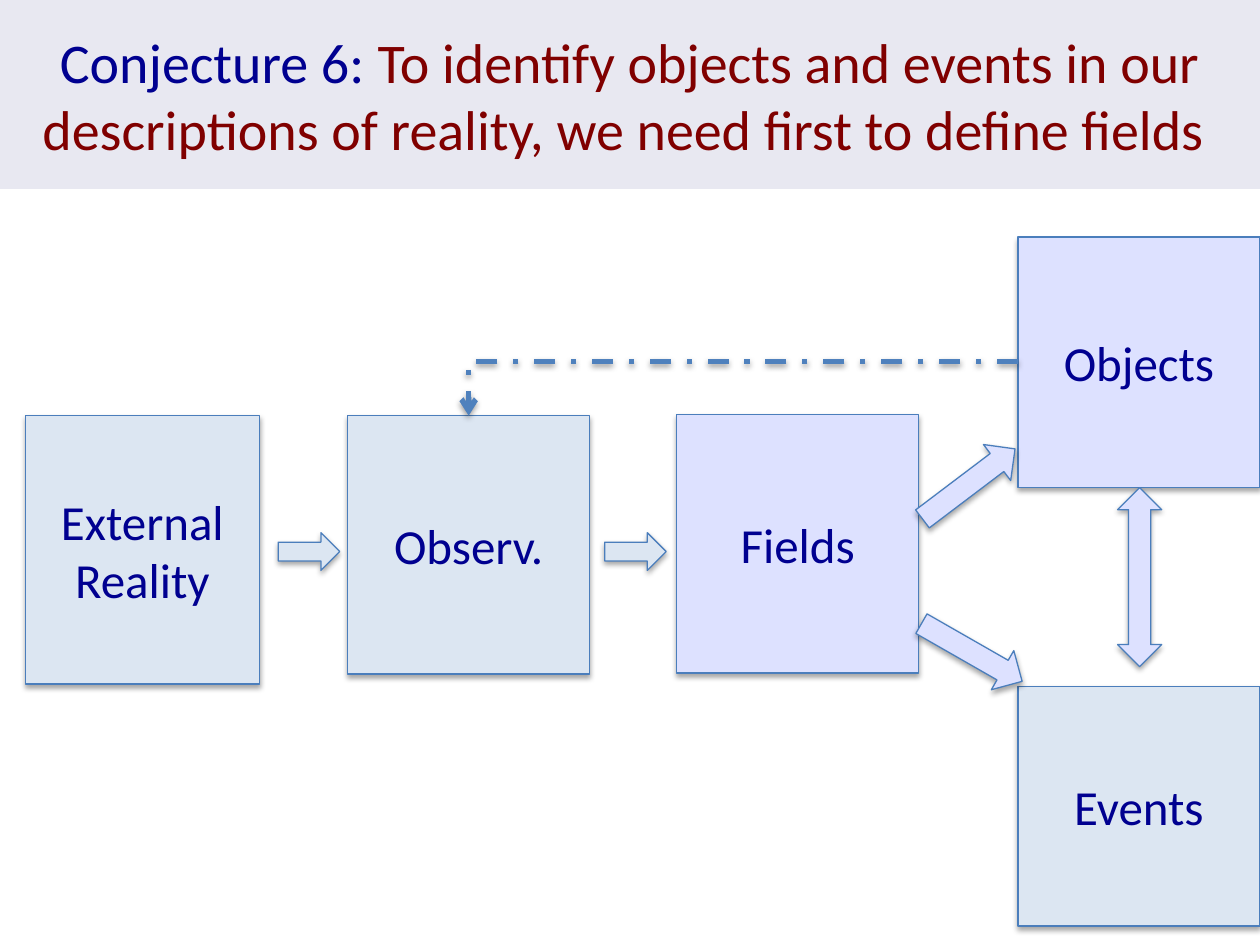
from lxml import etree
from pptx import Presentation
from pptx.dml.color import RGBColor
from pptx.enum.dml import MSO_LINE
from pptx.enum.shapes import MSO_CONNECTOR, MSO_SHAPE
from pptx.enum.text import MSO_ANCHOR, PP_ALIGN
from pptx.oxml.ns import qn
from pptx.util import Cm, Pt

RECTANGLE = MSO_SHAPE.RECTANGLE
RIGHT_ARROW = MSO_SHAPE.RIGHT_ARROW
UP_DOWN_ARROW = MSO_SHAPE.UP_DOWN_ARROW
ELBOW = MSO_CONNECTOR.ELBOW
DASH_DOT = MSO_LINE.DASH_DOT
MIDDLE = MSO_ANCHOR.MIDDLE
CENTER = PP_ALIGN.CENTER

NAVY, MAROON = "000090", "800000"
PALE_BLUE, LAVENDER = "DCE6F2", "DDE1FF"


def add_text(shape, text, size=28, color=NAVY):
    """Append a centred run to the shape's first paragraph."""
    shape.text_frame.word_wrap = True
    shape.text_frame.vertical_anchor = MIDDLE
    paragraph = shape.text_frame.paragraphs[0]
    paragraph.alignment = CENTER
    run = paragraph.add_run()
    run.text = text
    run.font.name = "Calibri"
    run.font.size = Pt(size)
    run.font.color.rgb = RGBColor.from_string(color)


def add_shadow(shape, distance, opacity):
    """Give the shape a soft shadow that falls straight down."""
    properties = shape._element.spPr
    effects = properties.find(qn("a:effectLst"))
    if effects is None:
        effects = etree.SubElement(properties, qn("a:effectLst"))
    shadow = etree.SubElement(effects, qn("a:outerShdw"), blurRad=str(Pt(3.15)),
                              dist=str(Pt(distance)), dir="5400000", rotWithShape="0")
    black = etree.SubElement(shadow, qn("a:srgbClr"), val="000000")
    etree.SubElement(black, qn("a:alpha"), val=str(opacity * 1000))


presentation = Presentation()
presentation.slide_width = Cm(25.4)
presentation.slide_height = Cm(19.05)
slide = presentation.slides.add_slide(presentation.slide_layouts[6])

# Boxes and block arrows: kind, left, top, width, height, rotation, fill, label
diagram = [
    (RECTANGLE, 0.51, 8.38, 4.72, 5.41, 0, PALE_BLUE, "External Reality"),
    (RIGHT_ARROW, 5.61, 10.74, 1.24, 0.76, 0, PALE_BLUE, ""),
    (RECTANGLE, 7.01, 8.38, 4.88, 5.21, 0, PALE_BLUE, "Observ."),
    (RIGHT_ARROW, 12.19, 10.74, 1.24, 0.76, 0, PALE_BLUE, ""),
    (RECTANGLE, 13.64, 8.36, 4.88, 5.21, 0, LAVENDER, "Fields"),
    (RECTANGLE, 20.52, 4.78, 4.88, 5.05, 0, LAVENDER, "Objects"),
    (RECTANGLE, 20.52, 13.84, 4.88, 4.83, 0, PALE_BLUE, "Events"),
    (RIGHT_ARROW, 18.36, 9.3, 2.34, 0.91, 322.9, LAVENDER, ""),
    (RIGHT_ARROW, 18.42, 12.7, 2.34, 0.91, 29.8, LAVENDER, ""),
    (UP_DOWN_ARROW, 22.53, 9.83, 0.89, 3.61, 0, LAVENDER, ""),
]
for kind, left, top, width, height, rotation, fill, label in diagram:
    shape = slide.shapes.add_shape(kind, Cm(left), Cm(top), Cm(width), Cm(height))
    shape.rotation = rotation
    shape.fill.solid()
    shape.fill.fore_color.rgb = RGBColor.from_string(fill)
    shape.line.color.rgb = RGBColor.from_string("4B7EBC")
    shape.line.width = Pt(0.75)
    shape.shadow.inherit = False
    add_shadow(shape, distance=1.8, opacity=35)
    if label:
        add_text(shape, label)

# Dashed feedback from Objects to Observ., with a single bend
feedback = slide.shapes.add_connector(ELBOW, Cm(20.52), Cm(7.29), Cm(9.45), Cm(8.38))
feedback._element.spPr.find(qn("a:prstGeom")).set("prst", "bentConnector2")
feedback.line.color.rgb = RGBColor.from_string("4F81BD")
feedback.line.width = Pt(3)
feedback.line.dash_style = DASH_DOT
etree.SubElement(feedback.line._get_or_add_ln(), qn("a:tailEnd"), type="arrow")
add_shadow(feedback, distance=1.6, opacity=38)

# Title band
title = slide.shapes.add_shape(RECTANGLE, 0, 0, Cm(25.4), Cm(3.81))
title.fill.solid()
title.fill.fore_color.rgb = RGBColor.from_string("E8E8F1")
title.line.fill.background()
title.shadow.inherit = False
add_text(title, "Conjecture 6: ", size=32)
add_text(title, "To identify objects and events in our descriptions of reality, "
         "we need first to define fields ", size=32, color=MAROON)

presentation.save("out.pptx")
